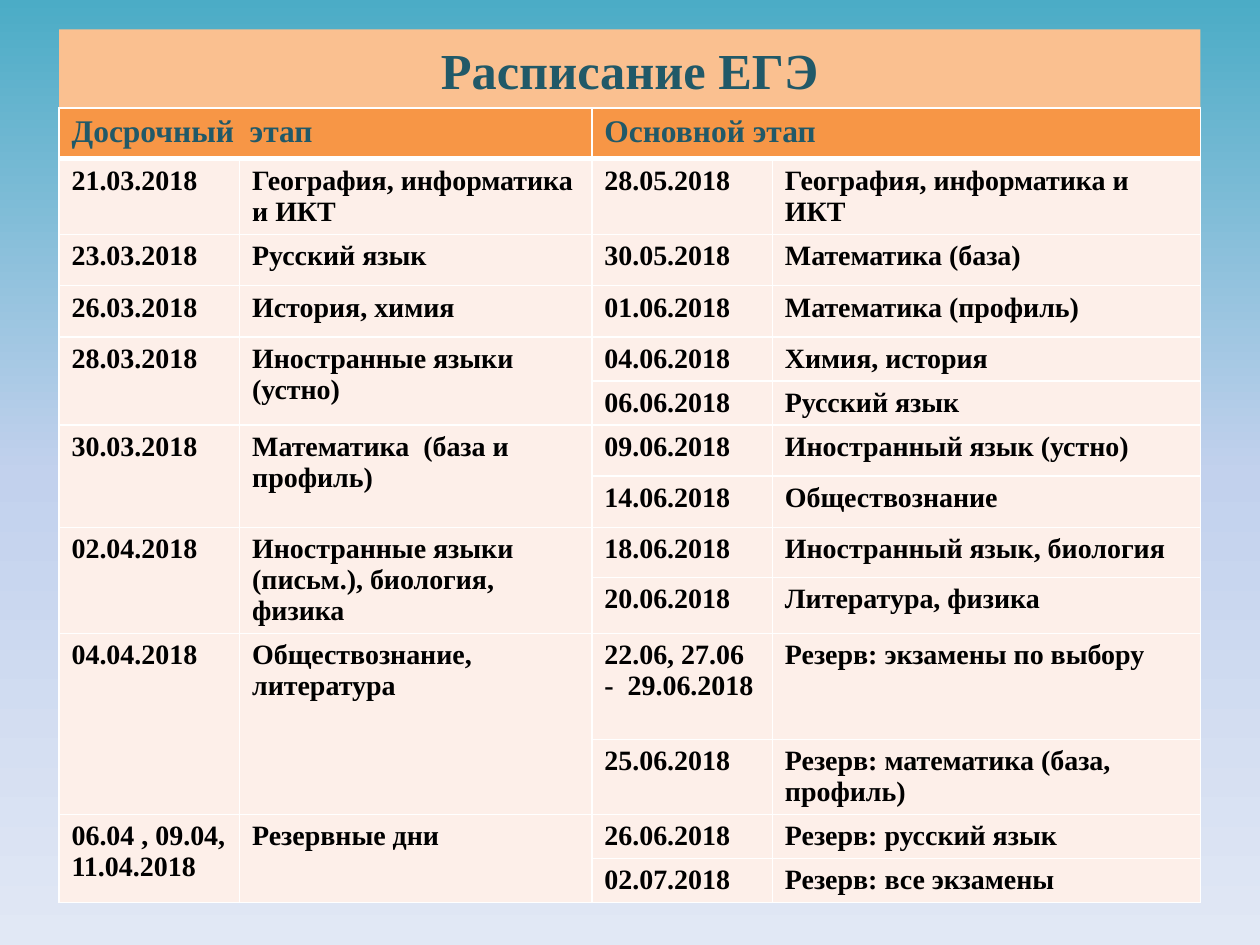
from copy import deepcopy

from lxml import etree
from pptx import Presentation
from pptx.dml.color import RGBColor
from pptx.enum.text import MSO_ANCHOR, PP_ALIGN
from pptx.oxml.ns import qn
from pptx.util import Cm, Pt

CENTER = PP_ALIGN.CENTER
MIDDLE = MSO_ANCHOR.MIDDLE
TITLE_ONLY = 5

COLORS = {
    "teal": "215968",
    "peach": "FAC090",
    "orange": "F79646",
    "pale": "FDEFE9",
    "black": "000000",
    "white": "FFFFFF",
}
SKY = [(0, "4BACC6"), (0.5, "C2D1ED"), (1, "E1E8F5")]

LEFT, WIDTH = 1.19, 23.01
COLS = [3.64, 7.1, 3.64, 8.63]
HEIGHTS = [1.02, 1.53, 1.03, 1.03, 0.89, 0.89, 1.03,
           1.03, 1.01, 1.13, 2.14, 1.51, 0.89, 0.87]
ROWS = [
    ("Досрочный  этап", None, "Основной этап", None),
    ("21.03.2018", "География, информатика и ИКТ",
     "28.05.2018", "География, информатика и ИКТ"),
    ("23.03.2018", "Русский язык", "30.05.2018", "Математика (база)"),
    ("26.03.2018", "История, химия", "01.06.2018", "Математика (профиль)"),
    ("28.03.2018", "Иностранные языки (устно)", "04.06.2018", "Химия, история"),
    (None, None, "06.06.2018", "Русский язык"),
    ("30.03.2018", "Математика  (база и профиль)",
     "09.06.2018", "Иностранный язык (устно)"),
    (None, None, "14.06.2018", "Обществознание"),
    ("02.04.2018", "Иностранные языки (письм.), биология, физика",
     "18.06.2018", "Иностранный язык, биология"),
    (None, None, "20.06.2018", "Литература, физика"),
    ("04.04.2018", "Обществознание, литература",
     "22.06, 27.06 -  29.06.2018", "Резерв: экзамены по выбору"),
    (None, None, "25.06.2018", "Резерв: математика (база, профиль)"),
    ("06.04 , 09.04, 11.04.2018", "Резервные дни",
     "26.06.2018", "Резерв: русский язык"),
    (None, None, "02.07.2018", "Резерв: все экзамены"),
]


class Deck:
    font = "Times New Roman"

    def __init__(self, slide):
        self.slide = slide

    def color(self, name):
        return RGBColor.from_string(COLORS[name])

    def paint(self, item, name):
        item.fill.solid()
        item.fill.fore_color.rgb = self.color(name)

    def text(self, frame, words, size, name):
        run = frame.paragraphs[0].add_run()
        run.text = words
        run.font.name = self.font
        run.font.size = Pt(size)
        run.font.bold = True
        run.font.color.rgb = self.color(name)

    def backdrop(self, stops):
        fill = self.slide.background.fill
        fill.gradient()
        fill.gradient_angle = 270
        group = self.slide.element.xpath(".//a:gsLst")[0]
        group.append(deepcopy(group[-1]))
        for stop, (place, code) in zip(fill.gradient_stops, stops):
            stop.position = place
            stop.color.rgb = RGBColor.from_string(code)

    def title(self, words, top, height):
        shape = self.slide.shapes.title
        shape.left, shape.top = Cm(LEFT), Cm(top)
        shape.width, shape.height = Cm(WIDTH), Cm(height)
        self.paint(shape, "peach")
        frame = shape.text_frame
        frame.vertical_anchor = MIDDLE
        frame.paragraphs[0].alignment = CENTER
        self.text(frame, words, 28.8, "teal")

    def border(self, cell, row):
        props = cell._tc.get_or_add_tcPr()
        for side in "LRTB":
            thick = (row, side) in ((0, "B"), (1, "T"))
            line = etree.SubElement(props, qn("a:ln" + side))
            line.set("w", str(Pt(3 if thick else 1)))
            solid = etree.SubElement(line, qn("a:solidFill"))
            etree.SubElement(solid, qn("a:srgbClr")).set("val", COLORS["white"])

    def table(self, rows, top):
        grid = self.slide.shapes.add_table(
            len(rows), len(COLS), Cm(LEFT), Cm(top), Cm(WIDTH), Cm(sum(HEIGHTS))
        ).table
        for col, width in zip(grid.columns, COLS):
            col.width = Cm(width)
        for line, height in zip(grid.rows, HEIGHTS):
            line.height = Cm(height)
        for r, row in enumerate(rows):
            size, ink, fill = (16, "black", "pale") if r else (18, "teal", "orange")
            for c, words in enumerate(row):
                cell = grid.cell(r, c)
                self.border(cell, r)
                self.paint(cell, fill)
                if words:
                    self.text(cell.text_frame, words, size, ink)
                else:
                    start = grid.cell(r - 1, c) if r else grid.cell(r, c - 1)
                    start.merge(cell)


def main():
    show = Presentation()
    show.slide_width, show.slide_height = Cm(25.4), Cm(19.05)
    deck = Deck(show.slides.add_slide(show.slide_layouts[TITLE_ONLY]))
    deck.backdrop(SKY)
    deck.title("Расписание ЕГЭ", 0.59, 1.62)
    deck.table(ROWS, 2.18)
    show.save("out.pptx")


if __name__ == "__main__":
    main()
